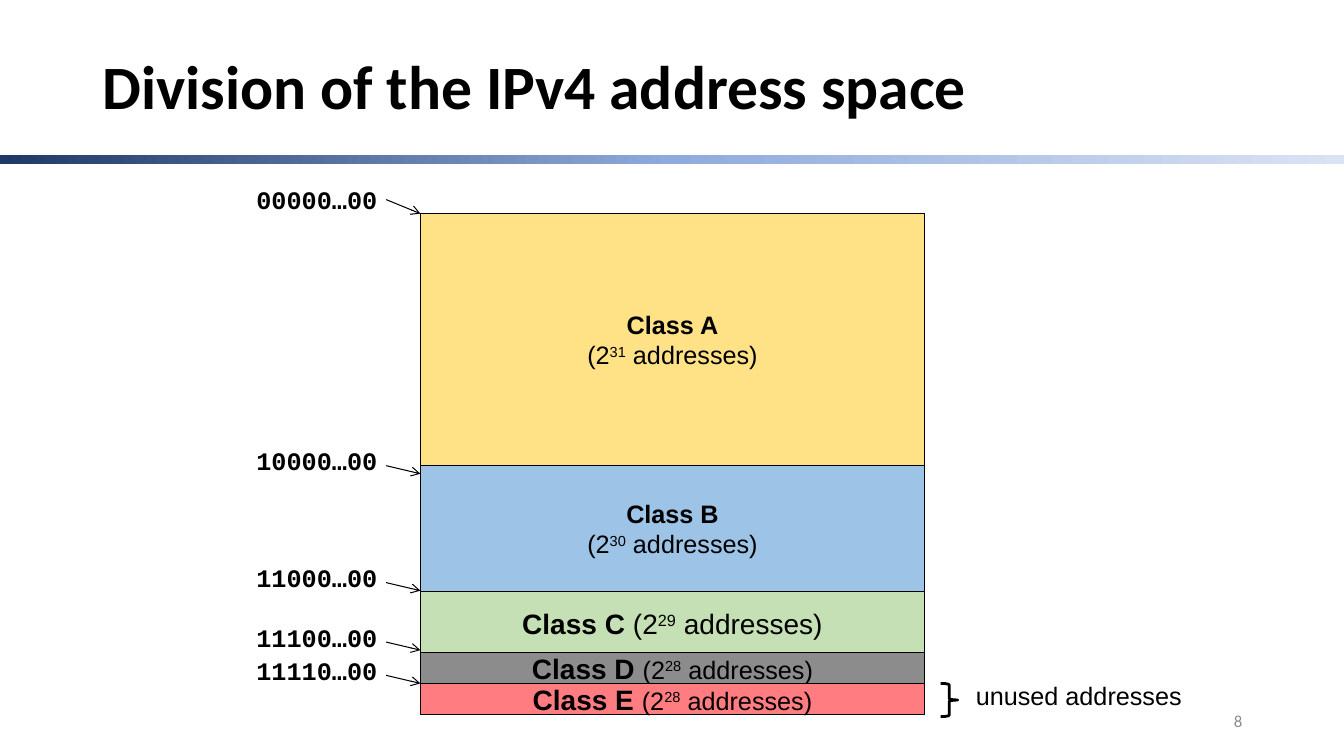
import copy
from dataclasses import dataclass

import lxml.etree
import pptx
import pptx.dml.color
import pptx.enum.shapes
import pptx.enum.text
import pptx.oxml.ns
import pptx.util

PX = 9144  # EMU per px, 100 px to the inch
BLOCK_LEFT, BLOCK_WIDTH = 417, 500
LABEL_LEFT, LABEL_WIDTH, LABEL_HEIGHT = 167, 217, 40
ARROW_LEFT = 383

COLORS = {
    "black": "000000",
    "gray": "8C8C8C",
    "yellow": "FFE285",
    "blue": "9DC3E6",
    "green": "C5E0B4",
    "red": "FF7C80",
    "bar_start": "203864",
    "bar_middle": "8FAADC",
    "bar_end": "DAE3F3",
}
SHAPES = pptx.enum.shapes.MSO_SHAPE
ALIGN = pptx.enum.text.PP_ALIGN
ANCHOR = pptx.enum.text.MSO_ANCHOR
qn = pptx.oxml.ns.qn


@dataclass
class AddressClass:
    letter: str
    exponent: int
    top: int
    height: int
    color: str
    name_size: int
    count_size: int
    two_lines: bool = False


@dataclass
class StartAddress:
    text: str
    top: int
    arrow_top: int
    arrow_drop: int = 8


CLASSES = [
    AddressClass("A", 31, 212, 250, "yellow", 18, 18, True),
    AddressClass("B", 30, 462, 125, "blue", 18, 18, True),
    AddressClass("C", 29, 587, 63, "green", 20, 20),
    AddressClass("D", 28, 647, 31, "gray", 20, 18),
    AddressClass("E", 28, 678, 31, "red", 20, 18),
]
START_ADDRESSES = [
    StartAddress("00000…00", 178, 198, 14),
    StartAddress("10000…00", 437, 462),
    StartAddress("11000…00", 553, 578),
    StartAddress("11100…00", 612, 637),
    StartAddress("11110…00", 645, 670),
]


def rgb(name: str) -> pptx.dml.color.RGBColor:
    return pptx.dml.color.RGBColor.from_string(COLORS[name])


def set_font(font, name: str, size: int, bold: bool = False, color: str = "black") -> None:
    font.name = name
    font.size = pptx.util.Pt(size)
    font.bold = bold
    font.color.rgb = rgb(color)


def add_shape(slide, kind, left: int, top: int, width: int, height: int):
    shape = slide.shapes.add_shape(kind, left * PX, top * PX, width * PX, height * PX)
    shape.shadow.inherit = False
    return shape


def add_text(slide, text: str, left: int, top: int, width: int, height: int,
             font: str, size: int, bold: bool = False, color: str = "black",
             align=ALIGN.LEFT, anchor=ANCHOR.TOP):
    box = slide.shapes.add_textbox(left * PX, top * PX, width * PX, height * PX)
    frame = box.text_frame
    frame.word_wrap = True
    frame.vertical_anchor = anchor
    paragraph = frame.paragraphs[0]
    paragraph.text = text
    paragraph.alignment = align
    set_font(paragraph.font, font, size, bold, color)
    return paragraph


def add_run(paragraph, text: str, size: int, bold: bool = False, raised: bool = False) -> None:
    run = paragraph.add_run()
    run.text = text
    set_font(run.font, "Arial", size, bold)
    if raised:
        run._r.get_or_add_rPr().set("baseline", "30000")


def add_bar(slide) -> None:
    bar = add_shape(slide, SHAPES.RECTANGLE, 0, 154, 1333, 9)
    bar.line.fill.background()
    bar.fill.gradient()
    bar.fill.gradient_angle = 0
    first = bar._element.spPr.find(".//" + qn("a:gs"))
    first.addnext(copy.deepcopy(first))
    names = ("bar_start", "bar_middle", "bar_end")
    for index, (stop, name) in enumerate(zip(bar.fill.gradient_stops, names)):
        stop.position = index / 2
        stop.color.rgb = rgb(name)


def add_class_block(slide, block: AddressClass) -> None:
    shape = add_shape(slide, SHAPES.RECTANGLE, BLOCK_LEFT, block.top, BLOCK_WIDTH, block.height)
    shape.fill.solid()
    shape.fill.fore_color.rgb = rgb(block.color)
    shape.line.color.rgb = rgb("black")
    shape.line.width = pptx.util.Pt(0.75)
    frame = shape.text_frame
    frame.word_wrap = True
    frame.vertical_anchor = ANCHOR.MIDDLE
    paragraph = frame.paragraphs[0]
    name = f"Class {block.letter}"
    add_run(paragraph, name if block.two_lines else name + " ", block.name_size, bold=True)
    if block.two_lines:
        paragraph = frame.add_paragraph()
    add_run(paragraph, "(2", block.count_size)
    add_run(paragraph, str(block.exponent), block.count_size, raised=True)
    add_run(paragraph, " addresses)", block.count_size)
    for paragraph in frame.paragraphs:
        paragraph.alignment = ALIGN.CENTER


def add_start_address(slide, start: StartAddress) -> None:
    add_text(slide, start.text, LABEL_LEFT, start.top, LABEL_WIDTH, LABEL_HEIGHT,
             "Courier New", 18, bold=True, align=ALIGN.RIGHT)
    arrow = slide.shapes.add_connector(
        pptx.enum.shapes.MSO_CONNECTOR.STRAIGHT, ARROW_LEFT * PX, start.arrow_top * PX,
        BLOCK_LEFT * PX, (start.arrow_top + start.arrow_drop) * PX)
    arrow.line.color.rgb = rgb("black")
    arrow.line.width = pptx.util.Pt(0.75)
    lxml.etree.SubElement(arrow.line._get_or_add_ln(), qn("a:tailEnd"), type="arrow")
    lxml.etree.SubElement(arrow._element.spPr, qn("a:effectLst"))


def main() -> None:
    presentation = pptx.Presentation()
    presentation.slide_width = 1333 * PX
    presentation.slide_height = 750 * PX
    slide = presentation.slides.add_slide(presentation.slide_layouts[6])

    # Title and gradient bar
    add_bar(slide)
    title = add_text(slide, "Division of the IPv4 address space", 92, 40, 1150, 97,
                     "Calibri", 44, bold=True, anchor=ANCHOR.MIDDLE)
    title.line_spacing = 0.9

    # Address space with the first address of each class
    for block in CLASSES:
        add_class_block(slide, block)
    for start in START_ADDRESSES:
        add_start_address(slide, start)

    # Brace for the unused addresses
    brace = add_shape(slide, SHAPES.RIGHT_BRACE, 933, 678, 17, 33)
    brace.fill.background()
    brace.line.color.rgb = rgb("black")
    brace.line.width = pptx.util.Pt(2)
    add_text(slide, "unused addresses", 958, 670, 241, LABEL_HEIGHT, "Arial", 18)

    # Slide number
    add_text(slide, "8", 942, 695, 300, 40, "Calibri", 12, color="gray",
             align=ALIGN.RIGHT, anchor=ANCHOR.MIDDLE)

    presentation.save("out.pptx")


if __name__ == "__main__":
    main()
